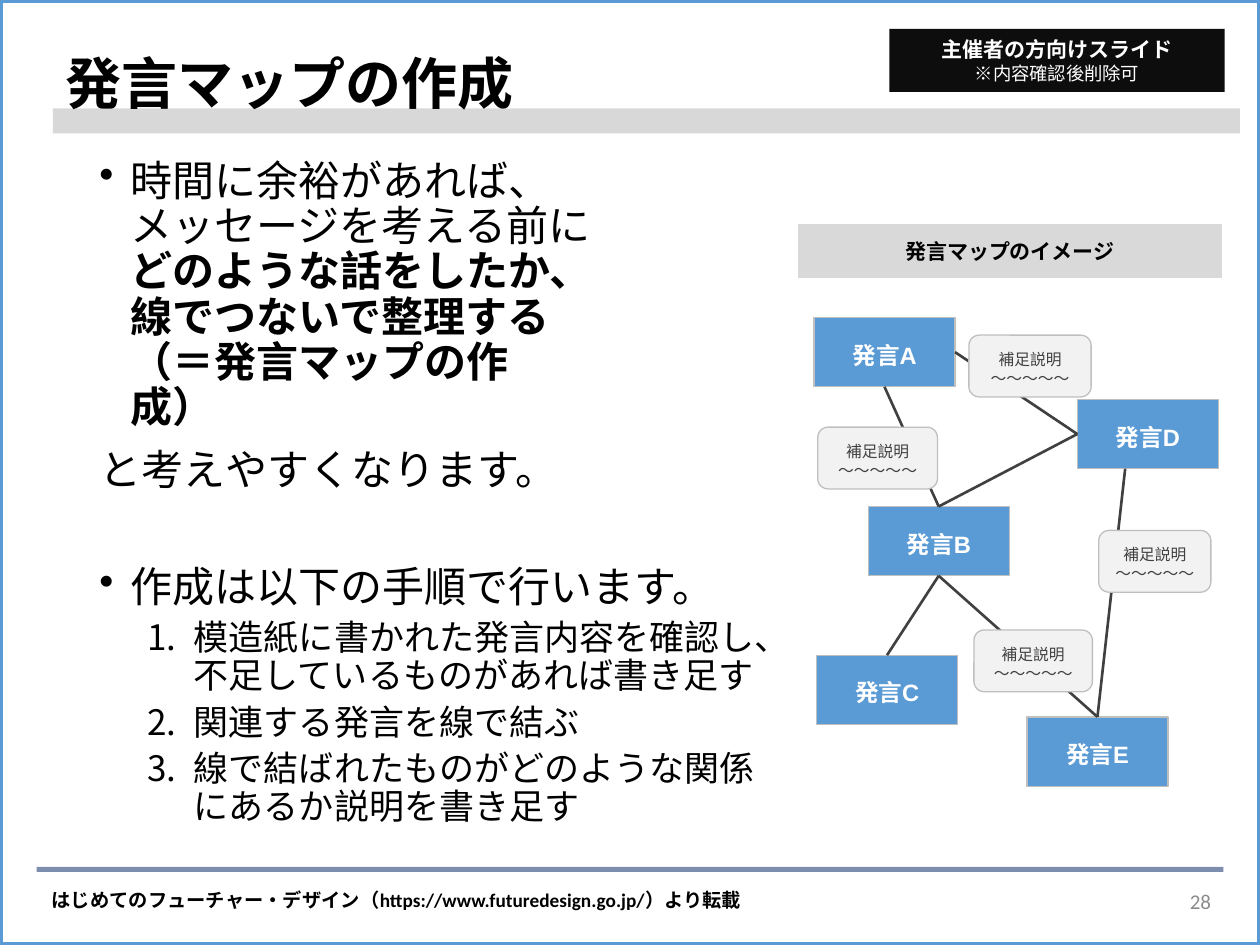
from dataclasses import dataclass
from typing import Optional

from lxml.etree import SubElement
from pptx import Presentation
from pptx.dml.color import RGBColor
from pptx.enum.shapes import MSO_CONNECTOR, MSO_SHAPE
from pptx.enum.text import MSO_ANCHOR, PP_ALIGN
from pptx.oxml.ns import qn
from pptx.util import Inches, Pt

BOTTOM, LEFT, RIGHT, TOP = 2, 1, 3, 0
CENTER = PP_ALIGN.CENTER
BLACK, WHITE, BLUE, DARK = "000000", "FFFFFF", "5B9BD5", "404040"


@dataclass
class Line:
    text: str
    size: float
    color: str = BLACK
    bold: bool = False
    font: str = "Calibri"
    align: PP_ALIGN = PP_ALIGN.LEFT


@dataclass
class Remark:
    name: str
    left: float
    top: float


@dataclass
class Link:
    start: str
    start_site: int
    end: str
    end_site: int
    start_at: Optional[tuple] = None  # free start point, off the side's middle


@dataclass
class Step:
    phrases: list  # (text, bold); "\v" breaks the line
    size: float
    before: float
    left: float = 0
    hang: float = 0
    bullet: Optional[tuple] = None  # (tag, attributes)


REMARKS = [Remark("A", 6.46, 2.52), Remark("B", 6.89, 4.02), Remark("C", 6.48, 5.2),
           Remark("D", 8.55, 3.17), Remark("E", 8.15, 5.69)]
LINKS = [Link("A", BOTTOM, "B", TOP), Link("B", BOTTOM, "C", TOP),
         Link("A", RIGHT, "D", LEFT), Link("D", LEFT, "B", TOP),
         Link("D", BOTTOM, "E", TOP, (8.93, 3.72)), Link("B", BOTTOM, "E", TOP)]
NOTES = [(8.72, 4.21, 0.89), (6.49, 3.39, 0.95), (7.73, 5, 0.94), (7.69, 2.66, 0.97)]

DOT = dict(left=0.25, hang=0.25, bullet=("a:buChar", {"char": "•"}))
NUMBER = dict(size=20, before=5, left=0.75, hang=0.37,
              bullet=("a:buAutoNum", {"type": "arabicPeriod"}))
STEPS = [
    Step([("時間に余裕があれば、\vメッセージを考える前に\v", False),
          ("どのような話をしたか、\v線でつないで整理する\v（＝発言マップの作\v成）", True)],
         24, 10, **DOT),
    Step([("と考えやすくなります。", False)], 24, 10),
    Step([("作成は以下の手順で行います。", False)], 24, 41, **DOT),
    Step([("模造紙に書かれた発言内容を確認し、不足しているものがあれば書き足す", False)], **NUMBER),
    Step([("関連する発言を線で結ぶ", False)], **NUMBER),
    Step([("線で結ばれたものがどのような関係にあるか説明を書き足す", False)], **NUMBER),
]


def rgb(color: str) -> RGBColor:
    return RGBColor.from_string(color)


def write(sp, lines: list, anchor=MSO_ANCHOR.MIDDLE, insets=(0.1, 0.05, 0.1, 0.05),
          wrap: bool = True) -> None:
    tf = sp.text_frame
    tf.word_wrap, tf.vertical_anchor = wrap, anchor
    tf.margin_left, tf.margin_top, tf.margin_right, tf.margin_bottom = map(Inches, insets)
    for i, line in enumerate(lines):
        p = tf.add_paragraph() if i else tf.paragraphs[0]
        p.text, p.alignment = line.text, line.align
        p.font.size, p.font.bold, p.font.name = Pt(line.size), line.bold, line.font
        p.font.color.rgb = rgb(line.color)


def add_box(s, at: tuple, fill: Optional[str] = None, line: Optional[str] = None,
            width: float = 0.75, kind=MSO_SHAPE.RECTANGLE, alpha: Optional[int] = None):
    sp = s.shapes.add_shape(kind, *map(Inches, at))
    sp.shadow.inherit = False
    if fill:
        sp.fill.solid()
        sp.fill.fore_color.rgb = rgb(fill)
    else:
        sp.fill.background()
    if alpha is not None:
        color = sp._element.spPr.find(qn("a:solidFill"))[0]
        SubElement(color, qn("a:alpha")).set("val", str(alpha * 1000))
    if line:
        sp.line.color.rgb, sp.line.width = rgb(line), Pt(width)
    else:
        sp.line.fill.background()
    return sp


def add_text(s, at: tuple, line: Line, **options):
    sp = s.shapes.add_textbox(*map(Inches, at))
    write(sp, [line], **options)
    return sp


def add_steps(s, at: tuple, steps: list) -> None:
    tf = s.shapes.add_textbox(*map(Inches, at)).text_frame
    tf.word_wrap = True
    for i, step in enumerate(steps):
        p = tf.add_paragraph() if i else tf.paragraphs[0]
        p.line_spacing, p.space_before = 0.9, Pt(step.before)
        p.font.size, p.font.name, p.font.color.rgb = Pt(step.size), "Calibri", rgb(BLACK)
        for text, bold in step.phrases:
            for n, piece in enumerate(text.split("\v")):
                if n:
                    p.add_line_break()
                if piece:
                    r = p.add_run()
                    r.text, r.font.bold = piece, bold
        if step.bullet:
            tag, attributes = step.bullet
            pPr = p._p.get_or_add_pPr()
            pPr.set("marL", str(Inches(step.left)))
            pPr.set("indent", str(-Inches(step.hang)))
            bullet = pPr.makeelement(qn(tag), attributes)
            pPr.find(qn("a:defRPr")).addprevious(bullet)


def add_link(s, link: Link, boxes: dict) -> None:
    start = map(Inches, link.start_at or (0, 0))
    cn = s.shapes.add_connector(MSO_CONNECTOR.STRAIGHT, *start, 0, 0)
    if not link.start_at:
        cn.begin_connect(boxes[link.start], link.start_site)
    cn.end_connect(boxes[link.end], link.end_site)
    cn.line.color.rgb, cn.line.width = rgb(DARK), Pt(1.5)
    SubElement(cn._element.spPr, qn("a:effectLst"))


def main() -> None:
    prs = Presentation()
    prs.slide_width, prs.slide_height = Inches(10), Inches(7.5)
    s = prs.slides.add_slide(prs.slide_layouts[6])

    # Footer and title bars
    add_text(s, (0.41, 7, 5.64, 0.29),
             Line("はじめてのフューチャー・デザイン（https://www.futuredesign.go.jp/）より転載", 11, bold=True),
             anchor=MSO_ANCHOR.TOP, insets=(0, 0.05, 0.1, 0.05), wrap=False)
    add_box(s, (0.29, 6.88, 9.42, 0.04), "002060", alpha=51)
    add_box(s, (0.42, 0.86, 9.42, 0.2), "808080", alpha=30)

    # Title, body and page number
    title = add_text(s, (0.42, 0.15, 8.62, 1.07),
                     Line("発言マップの作成", 32, bold=True, font="Arial"))
    title.text_frame.paragraphs[0].line_spacing = 0.9
    add_steps(s, (0.69, 1.22, 5.44, 5.53), STEPS)
    add_text(s, (7.46, 6.95, 2.25, 0.4), Line("28", 12, "8C8C8C", align=PP_ALIGN.RIGHT))

    # Label for organisers
    write(add_box(s, (7.06, 0.23, 2.66, 0.5), "0D0D0D"),
          [Line("主催者の方向けスライド", 12, WHITE, True, align=CENTER),
           Line("※内容確認後削除可", 10.5, WHITE, align=CENTER)])

    # Remark map: heading, boxes, links, then notes on top of the links
    write(add_box(s, (6.32, 1.77, 3.39, 0.45), "D9D9D9", WHITE, 1.5),
          [Line("発言マップのイメージ", 12, BLACK, True, "Arial", CENTER)], insets=(0.06,) * 4)
    insets = (0.1, 0.09, 0.1, 0.05)
    boxes = {}
    for remark in REMARKS:
        sp = add_box(s, (remark.left, remark.top, 1.12, 0.55), BLUE, "BFBFBF")
        write(sp, [Line("発言" + remark.name, 13.5, WHITE, True, "Arial", CENTER)], insets=insets)
        boxes[remark.name] = sp
    for link in LINKS:
        add_link(s, link, boxes)
    for left, top, width in NOTES:
        sp = add_box(s, (left, top, width, 0.49), "F2F2F2", "BFBFBF",
                     kind=MSO_SHAPE.ROUNDED_RECTANGLE)
        write(sp, [Line(text, 9, DARK, align=CENTER) for text in ("補足説明", "～～～～～")],
              insets=insets)

    # Slide frame
    add_box(s, (0, 0, 10, 7.5), line=BLUE, width=3)
    prs.save("out.pptx")


if __name__ == "__main__":
    main()
